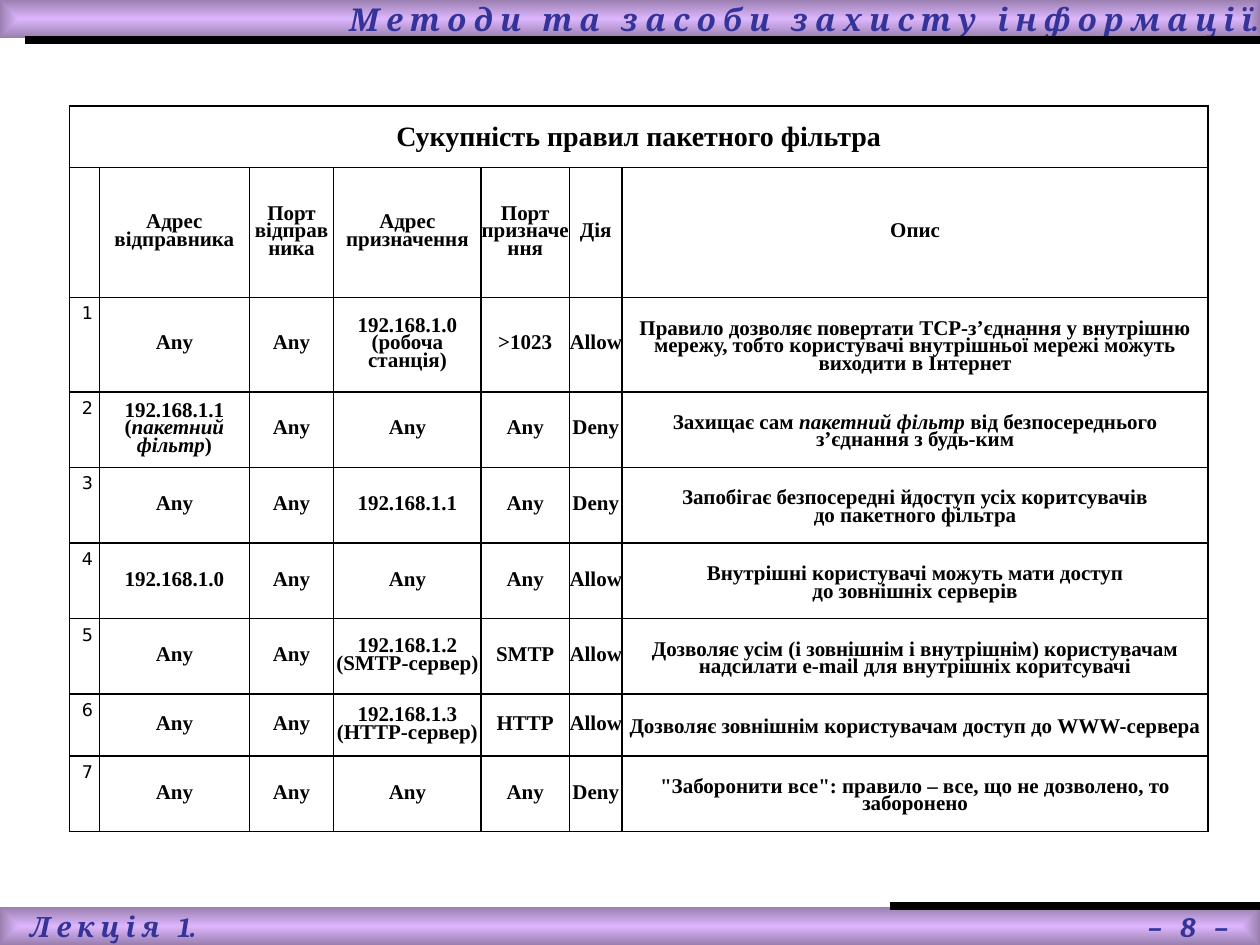
from dataclasses import dataclass

from lxml import etree
from pptx import Presentation, util as u
from pptx.dml.color import RGBColor
from pptx.enum import shapes, text
from pptx.oxml.ns import qn


@dataclass(frozen=True)
class Theme:
    ink: str = "000000"
    accent: str = "333399"
    band_centre: str = "DCB6FC"
    band_edge: str = "9A7FB0"
    band_font: str = "Cambria"
    table_font: str = "Times New Roman"
    number_font: str = "DejaVu Sans"
    header_size: float = 18
    footer_size: float = 16
    caption_size: float = 16
    cell_size: float = 12
    number_size: float = 10
    rule_width: float = 4.5
    border_width: float = 1
    tight: float = 0.75


@dataclass(frozen=True)
class Box:
    left: float
    top: float
    width: float
    height: float

    def share(self, x, y, w, h):
        """Box at the given shares of this one."""
        return Box(self.left + x * self.width, self.top + y * self.height,
                   w * self.width, h * self.height)

    def emu(self):
        return [u.Inches(v) for v in (self.left, self.top, self.width, self.height)]


THEME = Theme()
SLIDE = Box(0, 0, 10, 7.5)
COLUMNS = [0.23, 1.19, 0.67, 1.17, 0.7, 0.42, 4.65]
ROWS = [0.49, 1.03, 0.75, 0.6, 0.6, 0.6, 0.6, 0.49, 0.6]
CAPTION = "Сукупність правил пакетного фільтра"
HEADINGS = ["", "Адрес відправника", "Порт відправника", "Адрес призначення",
            "Порт призначення", "Дія", "Опис"]
# Asterisks enclose italic words.
RULES = [
    ["Any", "Any", "192.168.1.0\n(робоча станція)", ">1023", "Allow",
     "Правило дозволяє повертати ТСР-з’єднання у внутрішню мережу, "
     "тобто користувачі внутрішньої мережі можуть виходити в Інтернет"],
    ["192.168.1.1\n(*пакетний фільтр*)", "Any", "Any", "Any", "Deny",
     "Захищає сам *пакетний фільтр* від безпосереднього\nз’єднання з будь-ким"],
    ["Any", "Any", "192.168.1.1", "Any", "Deny",
     "Запобігає безпосередні йдоступ усіх коритсувачів\nдо пакетного фільтра"],
    ["192.168.1.0", "Any", "Any", "Any", "Allow",
     "Внутрішні користувачі можуть мати доступ\nдо зовнішніх серверів"],
    ["Any", "Any", "192.168.1.2\n(SMTP-сервер)", "SMTP", "Allow",
     "Дозволяє усім (і зовнішнім і внутрішнім) користувачам "
     "надсилати e-mail для внутрішніх коритсувачі"],
    ["Any", "Any", "192.168.1.3\n(НТТР-сервер)", "НТТР", "Allow",
     "Дозволяє зовнішнім користувачам доступ до WWW-сервера"],
    ["Any", "Any", "Any", "Any", "Deny",
     "\"Заборонити все\": правило – все, що не дозволено, то заборонено"],
]


def style(font, name, size, color, bold=True, italic=False):
    font.name, font.size, font.bold, font.italic = name, u.Pt(size), bold, italic
    font.color.rgb = RGBColor.from_string(color)


def spaced(words):
    return " ".join(words)


def add_band(slide, box, words, size, align, inset=0):
    """Bar shaded from its centre outwards, with one line of text."""
    band = slide.shapes.add_shape(shapes.MSO_SHAPE.RECTANGLE, *box.emu())
    band.shadow.inherit = False
    band.line.fill.background()
    band.fill.gradient()
    for stop, color, position in zip(band.fill.gradient_stops,
                                     (THEME.band_centre, THEME.band_edge), (0, 1)):
        stop.color.rgb = RGBColor.from_string(color)
        stop.position = position
    gradient = band.element.spPr.find(qn("a:gradFill"))
    gradient.remove(gradient.find(qn("a:lin")))
    centre = etree.SubElement(gradient, qn("a:path"), path="shape")
    etree.SubElement(centre, qn("a:fillToRect"),
                     {side: "50000" for side in "ltrb"})
    frame = band.text_frame
    frame.margin_left = u.Inches(inset)
    frame.margin_right = frame.margin_top = frame.margin_bottom = 0
    frame.vertical_anchor = text.MSO_ANCHOR.MIDDLE
    frame.word_wrap = True
    line = frame.paragraphs[0]
    line.text = words
    line.alignment = align
    for run in line.runs:
        style(run.font, THEME.band_font, size, THEME.accent, italic=True)
    return line


def add_rule(slide, box):
    left, top, width, _ = box.emu()
    rule = slide.shapes.add_connector(shapes.MSO_CONNECTOR.STRAIGHT,
                                      left, top, left + width, top)
    rule.line.width = u.Pt(THEME.rule_width)
    rule.line.color.rgb = RGBColor.from_string(THEME.ink)
    etree.SubElement(rule.element.spPr, qn("a:effectLst"))


def add_header(slide, box):
    add_band(slide, box, spaced("Методи та засоби захисту інформації") + ".",
             THEME.header_size, text.PP_ALIGN.RIGHT)
    add_rule(slide, box.share(0.02, 1.07, 0.98, 0))


def add_footer(slide, box):
    inset = 0.024 * box.width
    line = add_band(slide, box, f"{spaced('Лекція 1')}.\t{spaced('– 8 –')}",
                    THEME.footer_size, text.PP_ALIGN.LEFT, inset)
    tabs = etree.SubElement(line._p.get_or_add_pPr(), qn("a:tabLst"))
    etree.SubElement(tabs, qn("a:tab"), algn="r",
                     pos=str(u.Inches(0.975 * box.width - inset)))
    add_rule(slide, box.share(0.706, -0.03, 0.295, 0))


def set_borders(cell):
    cell.fill.background()
    properties = cell._tc.get_or_add_tcPr()
    for i, side in enumerate("LRTB"):
        border = etree.Element(qn(f"a:ln{side}"), w=str(u.Pt(THEME.border_width)))
        fill = etree.SubElement(border, qn("a:solidFill"))
        etree.SubElement(fill, qn("a:srgbClr"), val=THEME.ink)
        properties.insert(i, border)


def write_cell(cell, words, size, spacing):
    """Centred bold text; asterisks switch italics, newlines break lines."""
    cell.vertical_anchor = text.MSO_ANCHOR.MIDDLE
    paragraph = cell.text_frame.paragraphs[0]
    paragraph.alignment = text.PP_ALIGN.CENTER
    paragraph.line_spacing = spacing
    for i, piece in enumerate(words.split("*")):
        for j, line in enumerate(piece.split("\n")):
            if j:
                paragraph.add_line_break()
            run = paragraph.add_run()
            run.text = line
            style(run.font, THEME.table_font, size, THEME.ink, italic=i % 2 == 1)
    for line_break in paragraph._p.findall(qn("a:br")):
        etree.SubElement(line_break, qn("a:rPr"), sz=str(int(size * 100)))


def write_number(cell, number):
    cell.text_frame.text = str(number)
    style(cell.text_frame.paragraphs[0].runs[0].font, THEME.number_font,
          THEME.number_size, THEME.ink, bold=False)


def add_rules_table(slide, box):
    table = slide.shapes.add_table(len(ROWS), len(COLUMNS), *box.emu()).table
    table.first_row = table.horz_banding = False
    for column, share in zip(table.columns, COLUMNS):
        column.width = u.Inches(box.width * share / sum(COLUMNS))
    for row, share in zip(table.rows, ROWS):
        row.height = u.Inches(box.height * share / sum(ROWS))
    for cell in table.iter_cells():
        set_borders(cell)
    table.cell(0, 0).merge(table.cell(0, len(COLUMNS) - 1))
    write_cell(table.cell(0, 0), CAPTION, THEME.caption_size, 1.0)
    for r, entries in enumerate([HEADINGS[1:]] + RULES, start=1):
        if r > 1:
            write_number(table.cell(r, 0), r - 1)
        for c, words in enumerate(entries, start=1):
            cell = table.cell(r, c)
            cell.margin_left = cell.margin_right = 0
            cell.margin_top = cell.margin_bottom = 0
            if r > 1 and c == len(entries):
                cell.margin_top = u.Inches(0.05)
            write_cell(cell, words, THEME.cell_size, THEME.tight)


def main():
    deck = Presentation()
    deck.slide_width, deck.slide_height = SLIDE.emu()[2:]
    slide = deck.slides.add_slide(deck.slide_layouts[6])
    add_header(slide, SLIDE.share(0, 0, 1, 0.04))
    add_footer(slide, SLIDE.share(0, 0.96, 1, 0.04))
    add_rules_table(slide, SLIDE.share(0.055, 0.112, 0.903, 0.768))
    deck.save("out.pptx")


if __name__ == "__main__":
    main()
